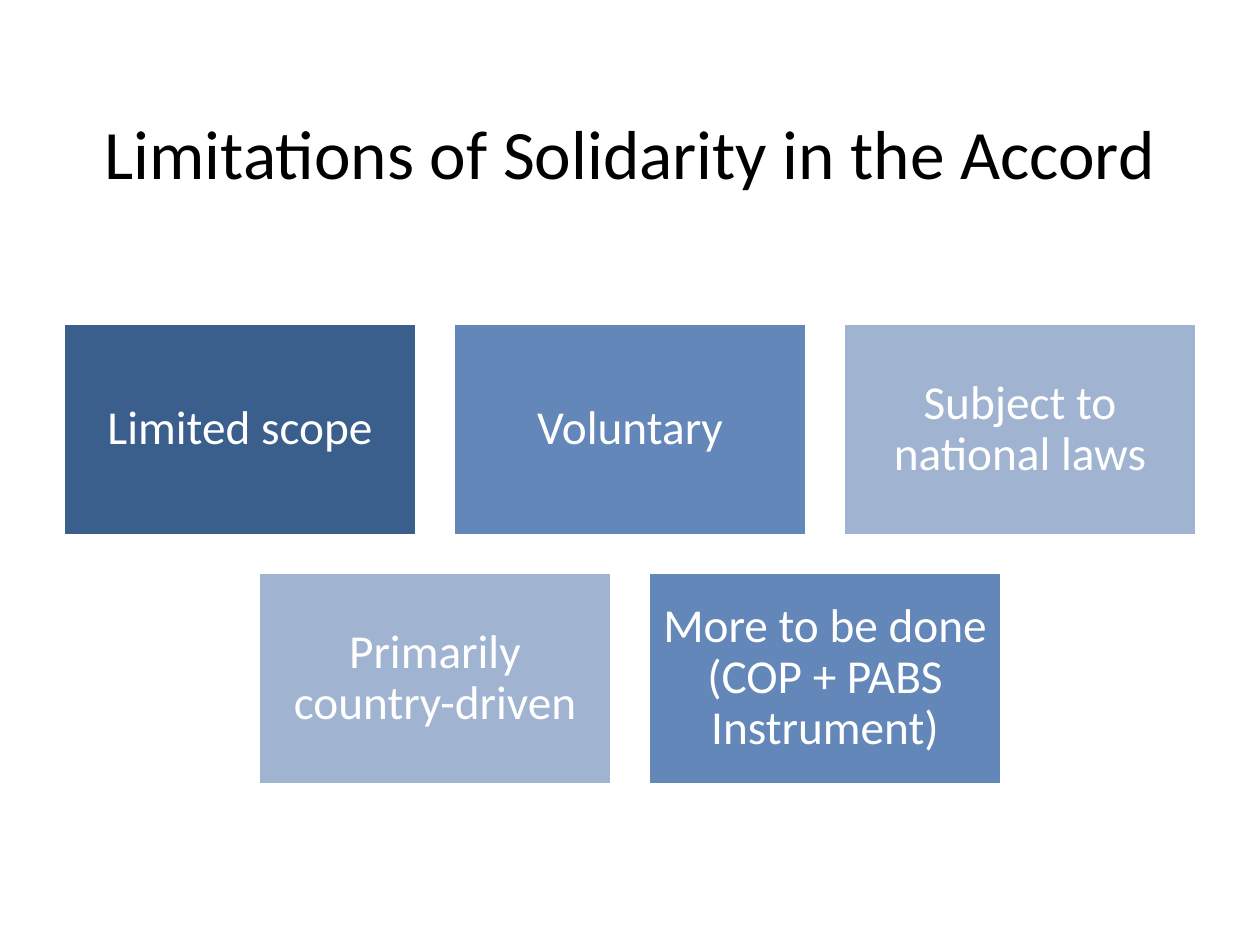
from dataclasses import dataclass

from pptx import Presentation
from pptx.dml.color import RGBColor
from pptx.enum.shapes import MSO_SHAPE
from pptx.enum.text import MSO_ANCHOR, MSO_AUTO_SIZE, PP_ALIGN
from pptx.slide import Slide
from pptx.text.text import TextFrame
from pptx.util import Emu, Pt

PX_PER_INCH = 126
SLIDE_W, SLIDE_H = 1260, 945
BOX_W, BOX_H, GAP = 354, 213, 36
GRID_TOP = 323
INSET = 14
FONT = "Calibri"
NAVY, BLUE, PALE = "3A5F8C", "6387B9", "A0B3D1"
WHITE, BLACK = "FFFFFF", "000000"


@dataclass(frozen=True)
class Card:
    text: str
    fill: str


ROWS = [
    [
        Card("Limited scope", NAVY),
        Card("Voluntary", BLUE),
        Card("Subject to national laws", PALE),
    ],
    [
        Card("Primarily country-driven", PALE),
        Card("More to be done (COP + PABS Instrument)", BLUE),
    ],
]


def px(n: int) -> Emu:
    return Emu(round(n * 914400 / PX_PER_INCH))


def rgb(value: str) -> RGBColor:
    return RGBColor.from_string(value)


def add_text(tf: TextFrame, text: str, size: float, color: str) -> None:
    tf.word_wrap = True
    tf.auto_size = MSO_AUTO_SIZE.NONE
    tf.vertical_anchor = MSO_ANCHOR.MIDDLE
    p = tf.paragraphs[0]
    p.alignment = PP_ALIGN.CENTER
    r = p.add_run()
    r.text = text
    r.font.name = FONT
    r.font.size = Pt(size)
    r.font.color.rgb = rgb(color)


def add_title(s: Slide, text: str) -> None:
    sp = s.shapes.title
    sp.left, sp.top, sp.width, sp.height = px(63), px(73), px(1134), px(158)
    add_text(sp.text_frame, text, 39.6, BLACK)


def add_card(s: Slide, card: Card, left: int, top: int) -> None:
    sp = s.shapes.add_shape(
        MSO_SHAPE.RECTANGLE, px(left), px(top), px(BOX_W), px(BOX_H)
    )
    sp.shadow.inherit = False
    sp.fill.solid()
    sp.fill.fore_color.rgb = rgb(card.fill)
    sp.line.color.rgb = rgb(WHITE)
    sp.line.width = Pt(2)
    tf = sp.text_frame
    tf.margin_left = tf.margin_right = px(INSET)
    tf.margin_top = tf.margin_bottom = px(INSET)
    add_text(tf, card.text, 27, WHITE)
    tf.paragraphs[0].line_spacing = 0.9


def add_row(s: Slide, cards: list[Card], top: int) -> None:
    width = len(cards) * (BOX_W + GAP) - GAP
    left = (SLIDE_W - width) // 2
    for i, card in enumerate(cards):
        add_card(s, card, left + i * (BOX_W + GAP), top)


def main() -> None:
    prs = Presentation()
    prs.slide_width, prs.slide_height = px(SLIDE_W), px(SLIDE_H)
    s = prs.slides.add_slide(prs.slide_layouts[5])
    add_title(s, "Limitations of Solidarity in the Accord")
    for i, cards in enumerate(ROWS):
        add_row(s, cards, GRID_TOP + i * (BOX_H + GAP))
    prs.save("out.pptx")


if __name__ == "__main__":
    main()
